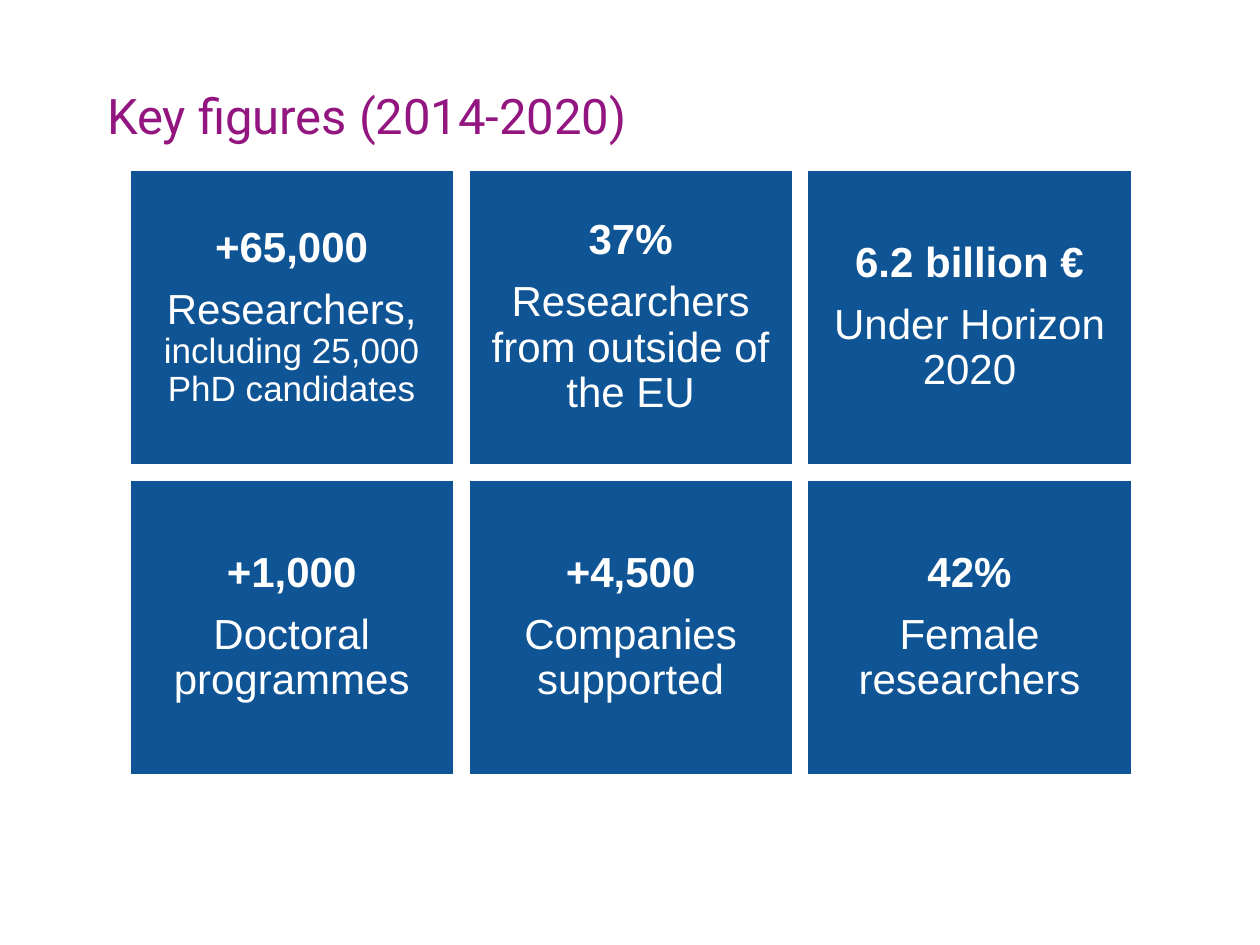
from pptx import Presentation
from pptx import util as u
from pptx.dml.color import RGBColor
from pptx.enum import shapes, text

COLOURS = {"heading": "931680", "tile": "0F5494", "white": "FFFFFF"}
HEADING = "Key figures (2014-2020)"
FIGURES = [
    ("+65,000", [("Researchers,", 24), (" including 25,000 PhD candidates", 20)]),
    ("37%", [("Researchers from outside of the EU", 24)]),
    ("6.2 billion €", [("Under Horizon 2020", 24)]),
    ("+1,000", [("Doctoral programmes", 24)]),
    ("+4,500", [("Companies supported", 24)]),
    ("42%", [("Female researchers", 24)]),
]
COLUMNS = 3
LEFT, TOP = 1.03, 1.35
WIDTH, HEIGHT = 2.57, 2.34
GAP = 0.12


def colour(name):
    return RGBColor.from_string(COLOURS[name])


def add_run(paragraph, words, size, font, ink, bold=False):
    run = paragraph.add_run()
    run.text = words
    run.font.size = u.Pt(size)
    run.font.name = font
    run.font.bold = bold
    run.font.color.rgb = colour(ink)


def set_frame(frame, anchor, margins):
    frame.word_wrap = True
    frame.auto_size = text.MSO_AUTO_SIZE.NONE
    frame.vertical_anchor = anchor
    (frame.margin_left, frame.margin_top,
     frame.margin_right, frame.margin_bottom) = map(u.Inches, margins)


def add_heading(slide):
    heading = slide.shapes.title
    heading.left, heading.top = u.Inches(0.75), u.Inches(0.63)
    heading.width, heading.height = u.Inches(9.13), u.Inches(0.52)
    set_frame(heading.text_frame, text.MSO_ANCHOR.BOTTOM, (0.1, 0.05, 0.1, 0))
    line = heading.text_frame.paragraphs[0]
    line.alignment = text.PP_ALIGN.LEFT
    line.line_spacing = 0.9
    line.space_before = u.Pt(0)
    add_run(line, HEADING, 28, "Roboto", "heading")


def add_tile(slide, index, figure, caption):
    row, column = divmod(index, COLUMNS)
    tile = slide.shapes.add_shape(
        shapes.MSO_SHAPE.RECTANGLE,
        u.Inches(LEFT + column * (WIDTH + GAP)),
        u.Inches(TOP + row * (HEIGHT + GAP)),
        u.Inches(WIDTH), u.Inches(HEIGHT))
    tile.shadow.inherit = False
    tile.fill.solid()
    tile.fill.fore_color.rgb = colour("tile")
    tile.line.color.rgb = colour("white")
    tile.line.width = u.Pt(1)
    frame = tile.text_frame
    set_frame(frame, text.MSO_ANCHOR.MIDDLE, (0.1,) * 4)
    number, label = frame.paragraphs[0], frame.add_paragraph()
    for line in (number, label):
        line.alignment = text.PP_ALIGN.CENTER
        line.line_spacing = 0.9
    number.space_after = u.Pt(9.5)
    add_run(number, figure, 24, "Arial", "white", bold=True)
    for words, size in caption:
        add_run(label, words, size, "Arial", "white")


def main():
    deck = Presentation()
    deck.slide_width, deck.slide_height = u.Inches(10), u.Inches(7.5)
    slide = deck.slides.add_slide(deck.slide_layouts[5])
    add_heading(slide)
    for index, (figure, caption) in enumerate(FIGURES):
        add_tile(slide, index, figure, caption)
    deck.save("out.pptx")


if __name__ == "__main__":
    main()
